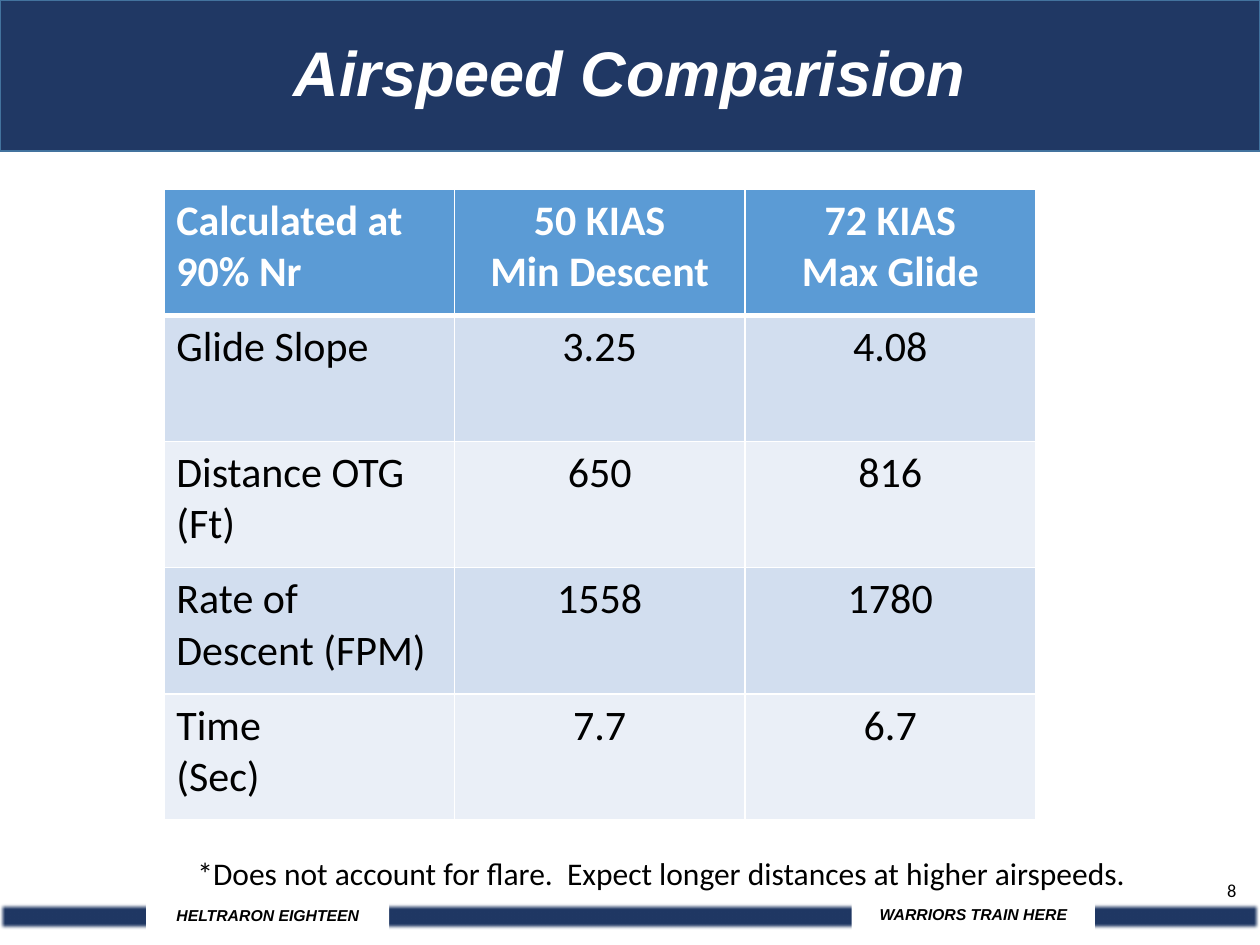
from lxml.etree import SubElement
from pptx import Presentation
from pptx.dml.color import RGBColor
from pptx.enum.shapes import MSO_SHAPE
from pptx.enum.text import MSO_ANCHOR, PP_ALIGN
from pptx.oxml.ns import qn
from pptx.util import Inches, Pt


def color(value):
    return RGBColor.from_string(value)


def write(frame, text, size, font="Calibri", fill="000000", bold=False, italic=False,
          align=PP_ALIGN.CENTER, anchor=MSO_ANCHOR.TOP, spacing=1.0):
    frame.word_wrap = True
    frame.vertical_anchor = anchor
    frame.text = text
    for paragraph in frame.paragraphs:
        paragraph.alignment = align
        paragraph.line_spacing = spacing
        paragraph.font.size = Pt(size)
        paragraph.font.name = font
        paragraph.font.bold = bold
        paragraph.font.italic = italic
        paragraph.font.color.rgb = color(fill)


prs = Presentation()
prs.slide_width = Inches(10)
prs.slide_height = Inches(7.5)
slide = prs.slides.add_slide(prs.slide_layouts[6])

bands = []
for left, top, width, height, fill in [
    (0, 0, 10, 1.2, "203864"),
    (0, 7.17, 10, 0.21, "203864"),
    (1.16, 7.14, 1.93, 0.29, "FFFFFF"),
    (6.76, 7.13, 1.93, 0.29, "FFFFFF"),
]:
    band = slide.shapes.add_shape(
        MSO_SHAPE.RECTANGLE, Inches(left), Inches(top), Inches(width), Inches(height))
    band.shadow.inherit = False
    band.fill.solid()
    band.fill.fore_color.rgb = color(fill)
    band.line.fill.background()
    bands.append(band)

header, footer, unit, motto = bands
header.line.color.rgb = color("43739E")
header.line.width = Pt(1)
footer_effects = footer._element.spPr.find(qn("a:effectLst"))
SubElement(footer_effects, qn("a:softEdge"), rad=str(Inches(0.03)))
for label, text in [(unit, "HELTRARON EIGHTEEN"), (motto, "WARRIORS TRAIN HERE")]:
    write(label.text_frame, text, 9, font="Arial", bold=True, italic=True)

rows = [
    ("Calculated at 90% Nr", "50 KIAS\nMin Descent", "72 KIAS\nMax Glide"),
    ("Glide Slope", "3.25", "4.08"),
    ("Distance OTG (Ft)", "650", "816"),
    ("Rate of Descent (FPM)", "1558", "1780"),
    ("Time\n(Sec)", "7.7", "6.7"),
]
comparison = slide.shapes.add_table(
    len(rows), 3, Inches(1.3), Inches(1.5), Inches(6.92), Inches(5.01)).table
for r, row in enumerate(rows):
    heading = r == 0
    row_fill = "5B9BD5" if heading else ("EAEFF7", "D2DEEF")[r % 2]
    edges = {"a:lnL": 1, "a:lnR": 1, "a:lnT": 3 if r == 1 else 1, "a:lnB": 3 if heading else 1}
    for c, text in enumerate(row):
        cell = comparison.cell(r, c)
        write(cell.text_frame, text, 24, bold=heading,
              fill="FFFFFF" if heading else "000000",
              align=PP_ALIGN.CENTER if c else PP_ALIGN.LEFT)
        properties = cell._tc.get_or_add_tcPr()
        for edge, width in edges.items():
            border = SubElement(properties, qn(edge), w=str(Pt(width)))
            SubElement(SubElement(border, qn("a:solidFill")), qn("a:srgbClr"), val="FFFFFF")
        cell.fill.solid()
        cell.fill.fore_color.rgb = color(row_fill)

for left, top, width, height, text, style in [
    (9.55, 6.93, 0.45, 0.29, "8", dict(size=10.5)),
    (0, 0.08, 10, 1.05, "Airspeed Comparision",
     dict(size=36, font="Arial", fill="FFFFFF", bold=True, italic=True,
          anchor=MSO_ANCHOR.MIDDLE, spacing=0.9)),
    (1.37, 6.73, 7.76, 0.4,
     "*Does not account for flare.  Expect longer distances at higher airspeeds.",
     dict(size=18)),
]:
    caption = slide.shapes.add_textbox(Inches(left), Inches(top), Inches(width), Inches(height))
    write(caption.text_frame, text, **style)

prs.save("out.pptx")
